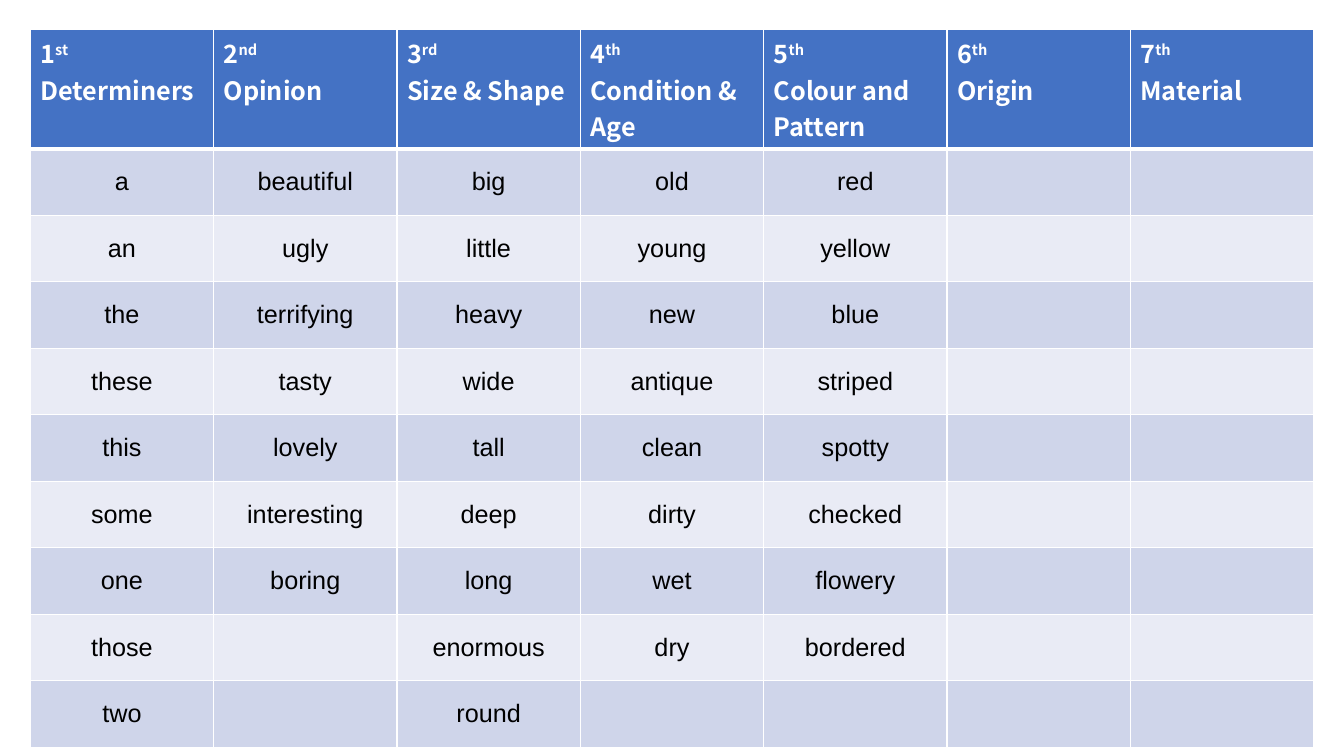
"""Build a slide with a table showing the order of adjectives."""
from lxml.etree import SubElement
from pptx import Presentation
from pptx.dml.color import RGBColor
from pptx.enum.text import MSO_ANCHOR, PP_ALIGN
from pptx.oxml.ns import qn
from pptx.util import Inches, Pt

COLOURS = {
    "header": "4472C4",
    "odd": "CFD5EA",
    "even": "E9EBF5",
    "white": "FFFFFF",
    "black": "000000",
}
CATEGORIES = [
    ("1", "st", "Determiners",
     ["a", "an", "the", "these", "this", "some", "one", "those", "two"]),
    ("2", "nd", "Opinion",
     ["beautiful", "ugly", "terrifying", "tasty", "lovely", "interesting", "boring"]),
    ("3", "rd", "Size & Shape",
     ["big", "little", "heavy", "wide", "tall", "deep", "long", "enormous", "round"]),
    ("4", "th", "Condition & Age",
     ["old", "young", "new", "antique", "clean", "dirty", "wet", "dry"]),
    ("5", "th", "Colour and Pattern",
     ["red", "yellow", "blue", "striped", "spotty", "checked", "flowery", "bordered"]),
    ("6", "th", "Origin", []),
    ("7", "th", "Material", []),
]
WORD_ROWS = 9


def style_cell(cell, fill, top, bottom):
    """Give a cell its white borders and its fill."""
    properties = cell._tc.get_or_add_tcPr()
    for side, width in (("L", 1), ("R", 1), ("T", top), ("B", bottom)):
        border = SubElement(properties, qn(f"a:ln{side}"), w=str(Pt(width)))
        paint = SubElement(border, qn("a:solidFill"))
        SubElement(paint, qn("a:srgbClr"), val=COLOURS["white"])
    cell.fill.solid()
    cell.fill.fore_color.rgb = RGBColor.from_string(COLOURS[fill])


def add_text(paragraph, text, font, colour, bold):
    """Add one run and return its font."""
    run = paragraph.add_run()
    run.text = text
    run.font.name = font
    run.font.size = Pt(18)
    run.font.bold = bold
    run.font.color.rgb = RGBColor.from_string(COLOURS[colour])
    return run.font


prs = Presentation()
prs.slide_width, prs.slide_height = Inches(13.33), Inches(7.5)
slide = prs.slides.add_slide(prs.slide_layouts[6])

adjectives = slide.shapes.add_table(
    WORD_ROWS + 1, len(CATEGORIES),
    Inches(0.3), Inches(0.29), Inches(12.73), Inches(6.98)).table
for column in adjectives.columns:
    column.width = Inches(12.73 / len(CATEGORIES))
for index, row in enumerate(adjectives.rows):
    row.height = Inches(0.66 if index else 0.95)

for column_index, (number, suffix, category, words) in enumerate(CATEGORIES):
    heading = adjectives.cell(0, column_index)
    style_cell(heading, "header", 1, 3)
    ordinal = heading.text_frame.paragraphs[0]
    add_text(ordinal, number, "Noto Sans CJK JP", "white", True)
    raised = add_text(ordinal, suffix, "Noto Sans CJK JP", "white", True)
    raised._element.set("baseline", "30000")
    add_text(heading.text_frame.add_paragraph(), category, "Noto Sans CJK JP", "white", True)

    for row_index in range(1, WORD_ROWS + 1):
        word_cell = adjectives.cell(row_index, column_index)
        style_cell(word_cell, "odd" if row_index % 2 else "even", 3 if row_index == 1 else 1, 1)
        word_cell.vertical_anchor = MSO_ANCHOR.MIDDLE
        if row_index <= len(words):
            entry = word_cell.text_frame.paragraphs[0]
            entry.alignment = PP_ALIGN.CENTER
            add_text(entry, words[row_index - 1], "Arial", "black", False)

prs.save("out.pptx")
